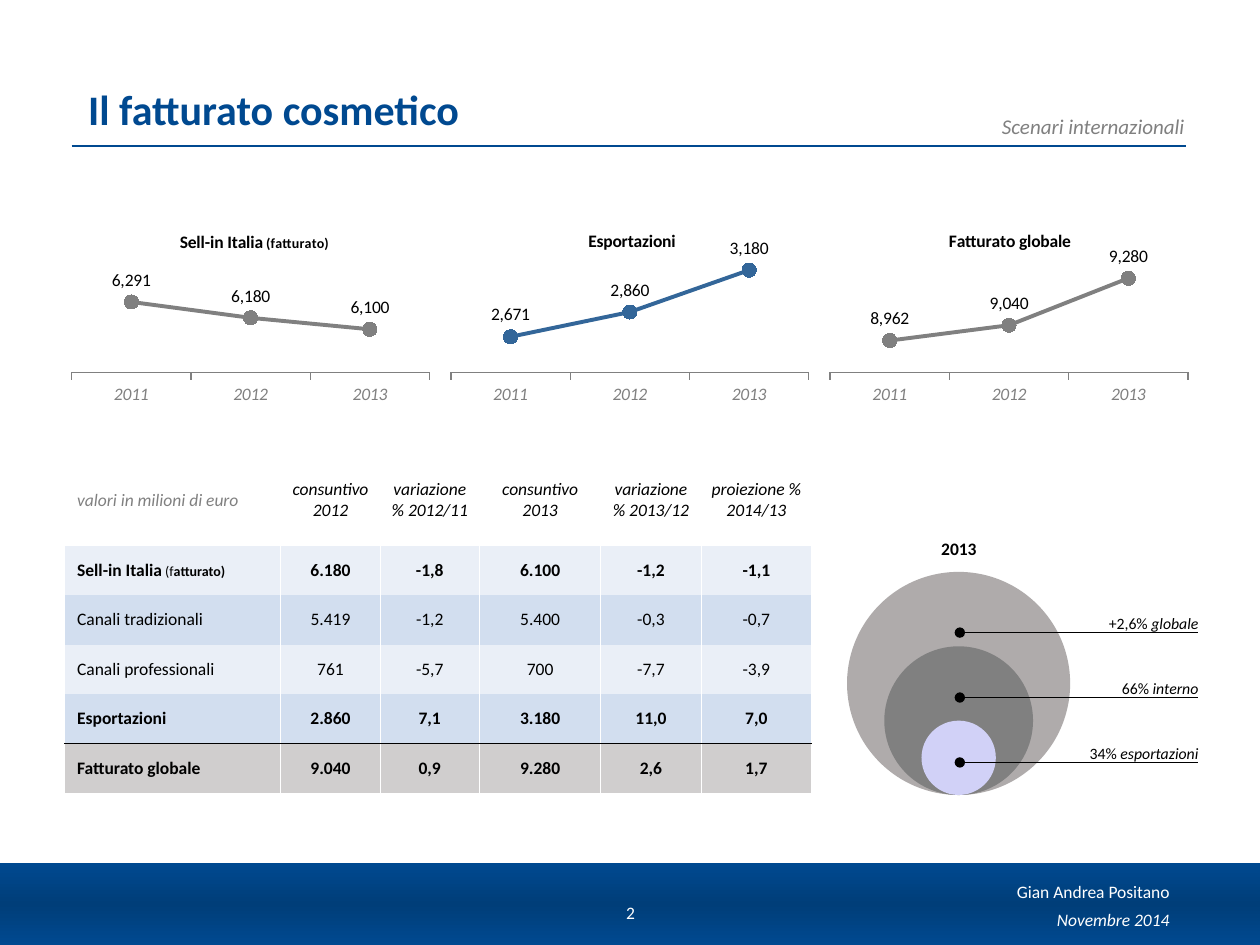
from lxml import etree
from pptx import Presentation
from pptx.chart.data import CategoryChartData
from pptx.dml.color import RGBColor
from pptx.enum.chart import XL_CHART_TYPE as CT, XL_LABEL_POSITION as LP
from pptx.enum.chart import XL_MARKER_STYLE as MS, XL_TICK_MARK as TM
from pptx.enum.dml import MSO_LINE
from pptx.enum.shapes import MSO_CONNECTOR, MSO_SHAPE
from pptx.enum.text import MSO_ANCHOR as VA, PP_ALIGN as AL
from pptx.oxml import parse_xml
from pptx.oxml.ns import nsdecls, qn
from pptx.util import Pt

FONT = "Calibri"
BLUE = RGBColor(0x00, 0x49, 0x90)
NAVY = RGBColor(0x00, 0x3E, 0x79)
STEEL = RGBColor(0x33, 0x66, 0x99)
GREY = RGBColor(0x80, 0x80, 0x80)
WARM = RGBColor(0xAF, 0xAB, 0xAB)
LILAC = RGBColor(0xD1, 0xD1, 0xF7)
PALE = RGBColor(0xEA, 0xEF, 0xF7)
SKY = RGBColor(0xD2, 0xDE, 0xEF)
SILVER = RGBColor(0xD0, 0xCE, 0xCE)
BLACK = RGBColor(0, 0, 0)
WHITE = RGBColor(0xFF, 0xFF, 0xFF)


def add_runs(p, runs, color=BLACK):
    for text, size, bold, italic in runs:
        r = p.add_run()
        r.text = text
        f = r.font
        f.name, f.size, f.bold, f.italic = FONT, Pt(size), bold, italic
        f.color.rgb = color


def set_layout(parent, index, **values):
    for old in parent.findall(qn("c:layout")):
        parent.remove(old)
    items = "".join(f'<c:{k} val="{v}"/>' for k, v in values.items())
    inner = '<c:layoutTarget val="inner"/>' if "w" in values else ""
    parent.insert(index, parse_xml(
        f'<c:layout {nsdecls("c")}><c:manualLayout>{inner}'
        f'<c:xMode val="edge"/><c:yMode val="edge"/>{items}'
        '</c:manualLayout></c:layout>'))


prs = Presentation()
prs.slide_width, prs.slide_height = Pt(720), Pt(540)
s = prs.slides.add_slide(prs.slide_layouts[5])

title = s.shapes.title
title.left, title.top, title.width, title.height = Pt(36), Pt(8), Pt(648), Pt(68.4)
tf = title.text_frame
tf.margin_left = tf.margin_right = Pt(14.4)
tf.margin_top = tf.margin_bottom = 0
tf.vertical_anchor = VA.BOTTOM
tf.paragraphs[0].alignment = AL.LEFT
add_runs(tf.paragraphs[0], [("Il fatturato cosmetico", 24, True, False)], BLUE)

band = s.shapes.add_shape(MSO_SHAPE.RECTANGLE, Pt(-13.7), Pt(493.2), Pt(741.6), Pt(46.8))
band.shadow.inherit = False
band.line.fill.background()
band.fill.gradient()
band.fill.gradient_angle = 90
stops = band._element.spPr.find(qn("a:gradFill")).find(qn("a:gsLst"))
for stop in list(stops):
    stops.remove(stop)
for pos, color in ((0, BLUE), (50, NAVY), (100, BLUE)):
    gs = etree.SubElement(stops, qn("a:gs"), pos=str(pos * 1000))
    etree.SubElement(gs, qn("a:srgbClr"), val=str(color))

LINE_X, LINE_END, LINE_Y, STEP = 548.5, 684.7, 361.5, 37.1
lines = [(41, 677.5, 83.5, BLUE, 0.75, False)]
lines += [(LINE_X, LINE_END, LINE_Y + i * STEP, BLACK, 0.25, True) for i in range(3)]

CIRCLE_X, CIRCLE_BOTTOM, RING = 547.8, 454.3, 42.5
for n, color in ((3, WARM), (2, GREY), (1, LILAC)):
    d = n * RING
    sp = s.shapes.add_shape(MSO_SHAPE.OVAL, Pt(CIRCLE_X - d / 2),
                            Pt(CIRCLE_BOTTOM - d), Pt(d), Pt(d))
    sp.shadow.inherit = False
    sp.fill.solid()
    sp.fill.fore_color.rgb = color
    sp.line.fill.background()

for x1, x2, y, color, width, dotted in lines:
    cx = s.shapes.add_connector(MSO_CONNECTOR.STRAIGHT, Pt(x1), Pt(y), Pt(x2), Pt(y))
    cx.line.color.rgb = color
    cx.line.width = Pt(width)
    if dotted:
        cx.line.dash_style = MSO_LINE.ROUND_DOT
        etree.SubElement(cx.line._get_or_add_ln(), qn("a:headEnd"), type="oval")
    etree.SubElement(cx._element.spPr, qn("a:effectLst"))

labels = [
    (439.2, 61.2, 244.8, 21.6, [("Scenari internazionali", 12, False, True)], GREY, AL.RIGHT, VA.TOP),
    (565.9, 517.7, 109.4, 15.1, [("Novembre 2014", 10, False, True)], WHITE, AL.RIGHT, VA.MIDDLE),
    (565.2, 499.7, 110.2, 22.3, [("Gian Andrea Positano", 10, False, False)], WHITE, AL.RIGHT, VA.TOP),
    (339.8, 506.9, 41, 28.8, [("2", 10, False, False)], WHITE, AL.CENTER, VA.MIDDLE),
    (506.9, 303.8, 82, 19.4, [("2013", 10, True, False)], BLACK, AL.CENTER, VA.TOP),
]
shares = (("+2,6% ", "globale"), ("66% ", "interno"), ("34% ", "esportazioni"))
for i, (share, name) in enumerate(shares):
    labels.append((586.8, LINE_Y - 14.5 + i * STEP, 98, 14.5,
                   [(share, 9, False, False), (name, 9, False, True)], BLACK, AL.RIGHT, None))
for x, y, w, h, runs, color, align, anchor in labels:
    tf = s.shapes.add_textbox(Pt(x), Pt(y), Pt(w), Pt(h)).text_frame
    tf.word_wrap = True
    if anchor is None:
        tf.margin_right = tf.margin_bottom = 0
    else:
        tf.vertical_anchor = anchor
    tf.paragraphs[0].alignment = align
    add_runs(tf.paragraphs[0], runs, color)

header = ["valori in milioni di euro", "consuntivo 2012", "variazione % 2012/11",
          "consuntivo\n2013", "variazione % 2013/12", "proiezione % 2014/13"]
rows = [
    (["Sell-in Italia", "6.180", "-1,8", "6.100", "-1,2", "-1,1"], True, PALE),
    (["Canali tradizionali", "5.419", "-1,2", "5.400", "-0,3", "-0,7"], False, SKY),
    (["Canali professionali", "761", "-5,7", "700", "-7,7", "-3,9"], False, PALE),
    (["Esportazioni", "2.860", "7,1", "3.180", "11,0", "7,0"], True, SKY),
    (["Fatturato globale", "9.040", "0,9", "9.280", "2,6", "1,7"], True, SILVER),
]
tbl = s.shapes.add_table(6, 6, Pt(36.9), Pt(260), Pt(427), Pt(193.5)).table
tbl.first_row = tbl.horz_banding = False
tbl._tbl.tblPr.find(qn("a:tableStyleId")).text = "{2D5ABB26-0587-4C30-8999-92F81FD0307C}"
for col, w in zip(tbl.columns, (123.6, 56.7, 56.7, 69.5, 57.2, 63.3)):
    col.width = Pt(w)
for i, row in enumerate(tbl.rows):
    row.height = Pt(28.3 if i else 51.8)
for i, (texts, bold, fill) in enumerate([(header, False, None)] + rows):
    for j, text in enumerate(texts):
        c = tbl.cell(i, j)
        c.vertical_anchor = VA.MIDDLE
        if i == 0 and j:
            c.margin_left = c.margin_right = c.margin_top = c.margin_bottom = Pt(5.7)
        borders = [("lnL", WHITE), ("lnR", WHITE)]
        if i == 5:
            borders.append(("lnT", BLACK))
        if i == 4:
            borders.append(("lnB", BLACK))
        for tag, color in borders:
            ln = etree.SubElement(c._tc.get_or_add_tcPr(), qn("a:" + tag), w=str(Pt(0.5)))
            etree.SubElement(etree.SubElement(ln, qn("a:solidFill")),
                             qn("a:srgbClr"), val=str(color))
        if fill is None:
            c.fill.background()
        else:
            c.fill.solid()
            c.fill.fore_color.rgb = fill
        p = c.text_frame.paragraphs[0]
        p.alignment = AL.CENTER if j else AL.LEFT
        for k, part in enumerate(text.split("\n")):
            if k:
                p.add_line_break()
            add_runs(p, [(part, 10, bold, i == 0)], BLACK if i or j else GREY)
        if (i, j) == (1, 0):
            add_runs(p, [(" (f", 8, False, False), ("atturato)", 8, True, False)])

charts = [
    ([("Sell-in Italia", 10, True, False), (" (fatturato)", 8, True, False)],
     "Series 1", (6291, 6180, 6100), 5800, 6600, GREY, 0.3),
    ([("Esportazioni", 10, True, False)],
     "Series 1", (2671, 2860, 3180), 2400, 3275, STEEL, 0.38),
    ([("Fatturato globale", 10, True, False)],
     "Fatturato globale", (8962, 9040, 9280), 8800, 9385, GREY, 0.33),
]
for i, (heading, name, values, low, high, color, title_x) in enumerate(charts):
    data = CategoryChartData()
    data.categories = ["2011", "2012", "2013"]
    data.add_series(name, values)
    ch = s.shapes.add_chart(CT.LINE_MARKERS_STACKED, Pt(36.7 + i * 216.7), Pt(120.2),
                            Pt(213.1), Pt(113), data).chart
    ch.font.name, ch.font.size = FONT, Pt(10)
    ch.font.color.rgb = BLACK
    ch.has_legend = False
    ch.has_title = True
    add_runs(ch.chart_title.text_frame.paragraphs[0], heading)
    set_layout(ch.chart_title._element, 1, x=title_x, y=0.08)
    set_layout(ch._chartSpace.chart.plotArea, 0, x=0.02, y=0.24, w=0.96, h=0.58)
    va, ca = ch.value_axis, ch.category_axis
    va.minimum_scale, va.maximum_scale = low, high
    va.has_major_gridlines = False
    va.visible = False
    ca.major_tick_mark = TM.OUTSIDE
    ca.format.line.color.rgb = GREY
    f = ca.tick_labels.font
    f.name, f.size, f.italic = FONT, Pt(10), True
    f.color.rgb = GREY
    plot = ch.plots[0]
    plot.vary_by_categories = False
    ser = plot.series[0]
    ser.smooth = False
    ser.format.line.color.rgb = color
    ser.format.line.width = Pt(2.25)
    ser.marker.style, ser.marker.size = MS.CIRCLE, 8
    ser.marker.format.fill.solid()
    ser.marker.format.fill.fore_color.rgb = color
    ser.marker.format.line.color.rgb = color
    dl = ser.data_labels
    dl.show_value = True
    dl.position = LP.ABOVE
    dl.number_format, dl.number_format_is_linked = "#,##0", False
    dl.font.name, dl.font.size = FONT, Pt(10)

prs.save("out.pptx")
